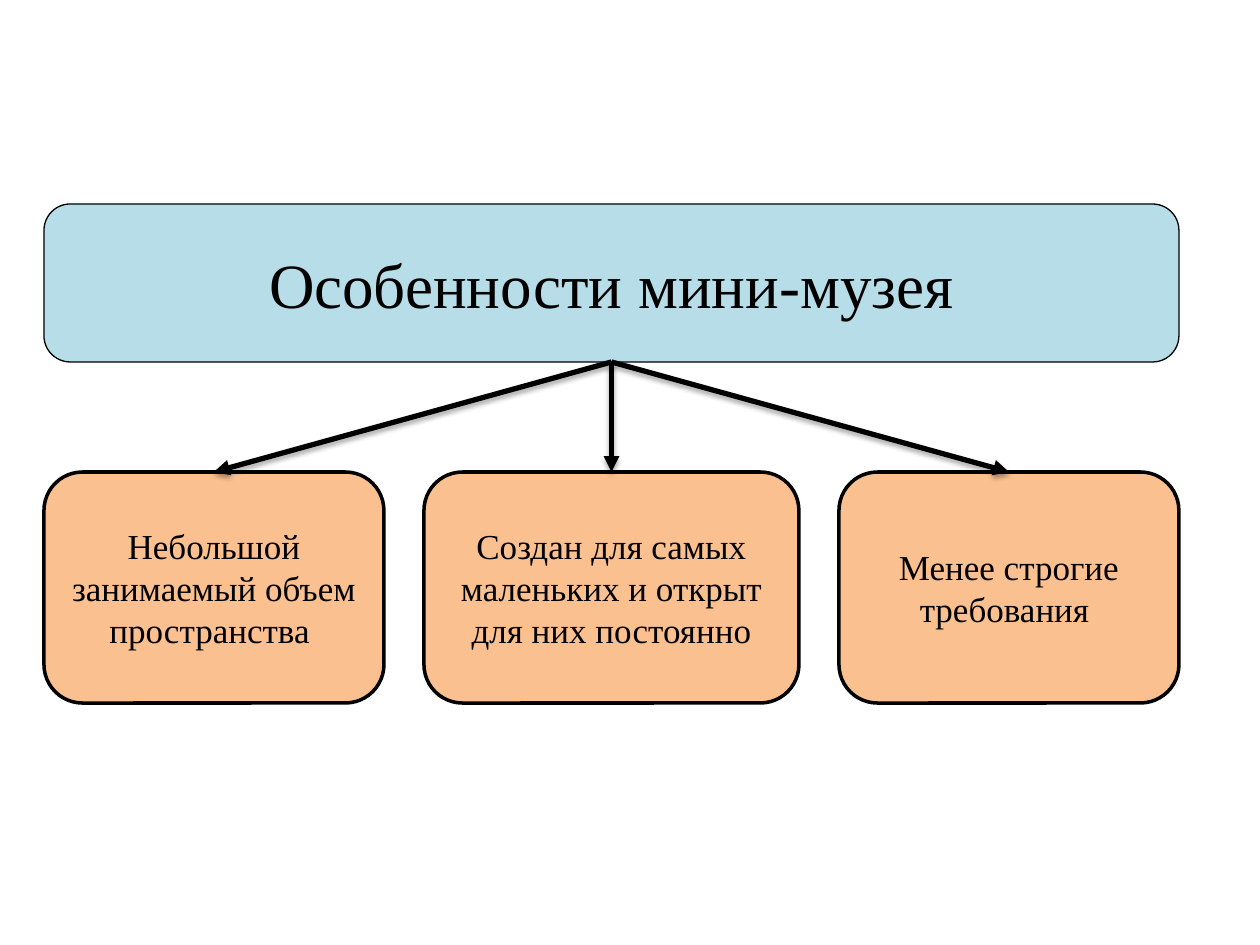
from dataclasses import dataclass

from lxml.etree import SubElement
from pptx import Presentation
from pptx.dml.color import RGBColor
from pptx.enum.shapes import MSO_CONNECTOR, MSO_SHAPE
from pptx.enum.text import MSO_ANCHOR, PP_ALIGN
from pptx.oxml.ns import qn
from pptx.util import Pt

EMU_PER_PX = 914400 / 126


def px(length):
    return round(length * EMU_PER_PX)


@dataclass(frozen=True)
class Theme:
    font: str = "Times New Roman"
    ink: RGBColor = RGBColor.from_string("000000")
    heading_fill: RGBColor = RGBColor.from_string("B7DEE8")
    feature_fill: RGBColor = RGBColor.from_string("FAC090")
    heading_size: int = 36
    feature_size: int = 20


class Diagram:
    def __init__(self, slide, theme):
        self.slide = slide
        self.theme = theme

    def box(self, text, left, top, width, height, fill, size, border):
        shape = self.slide.shapes.add_shape(
            MSO_SHAPE.ROUNDED_RECTANGLE, px(left), px(top), px(width), px(height))
        shape.shadow.inherit = False
        shape.fill.solid()
        shape.fill.fore_color.rgb = fill
        shape.line.color.rgb = self.theme.ink
        shape.line.width = Pt(border)
        frame = shape.text_frame
        frame.word_wrap = True
        frame.vertical_anchor = MSO_ANCHOR.MIDDLE
        paragraph = frame.paragraphs[0]
        paragraph.text = text
        paragraph.alignment = PP_ALIGN.CENTER
        paragraph.font.name = self.theme.font
        paragraph.font.size = Pt(size)
        paragraph.font.color.rgb = self.theme.ink

    def arrow(self, start, end):
        """Draw a line with a triangular head at its end and a soft shadow below."""
        connector = self.slide.shapes.add_connector(
            MSO_CONNECTOR.STRAIGHT, *map(px, start + end))
        connector.line.color.rgb = self.theme.ink
        connector.line.width = Pt(3)
        properties = connector._element.spPr
        SubElement(properties.find(qn("a:ln")), qn("a:tailEnd"), type="triangle")
        effects = SubElement(properties, qn("a:effectLst"))
        shadow = SubElement(effects, qn("a:outerShdw"), blurRad=str(Pt(3.1)),
                            dist=str(Pt(1.8)), dir="5400000", rotWithShape="0")
        color = SubElement(shadow, qn("a:srgbClr"), val=str(self.theme.ink))
        SubElement(color, qn("a:alpha"), val="35000")


def main():
    presentation = Presentation()
    presentation.slide_width = px(1260)
    presentation.slide_height = px(945)
    slide = presentation.slides.add_slide(presentation.slide_layouts[6])
    theme = Theme()
    diagram = Diagram(slide, theme)

    left, width = 44, 1135
    heading_top, heading_height = 204, 158
    feature_top, feature_height = 472, 231
    # The trailing spaces take part in the centring of the last line.
    features = [
        ("Небольшой занимаемый объем пространства ", 340),
        ("Создан для самых маленьких и открыт для них постоянно", 375),
        ("Менее строгие требования ", 340),
    ]
    gap = (width - sum(w for _, w in features)) // (len(features) - 1)

    diagram.box("Особенности мини-музея", left, heading_top, width, heading_height,
                theme.heading_fill, theme.heading_size, 0.75)

    arrow_ends = []
    feature_left = left
    for text, feature_width in features:
        diagram.box(text, feature_left, feature_top, feature_width, feature_height,
                    theme.feature_fill, theme.feature_size, 2)
        arrow_ends.append((feature_left + feature_width / 2, feature_top))
        feature_left += feature_width + gap

    heading_bottom = (left + width / 2, heading_top + heading_height)
    for end in arrow_ends:
        diagram.arrow(heading_bottom, end)

    presentation.save("out.pptx")


if __name__ == "__main__":
    main()
